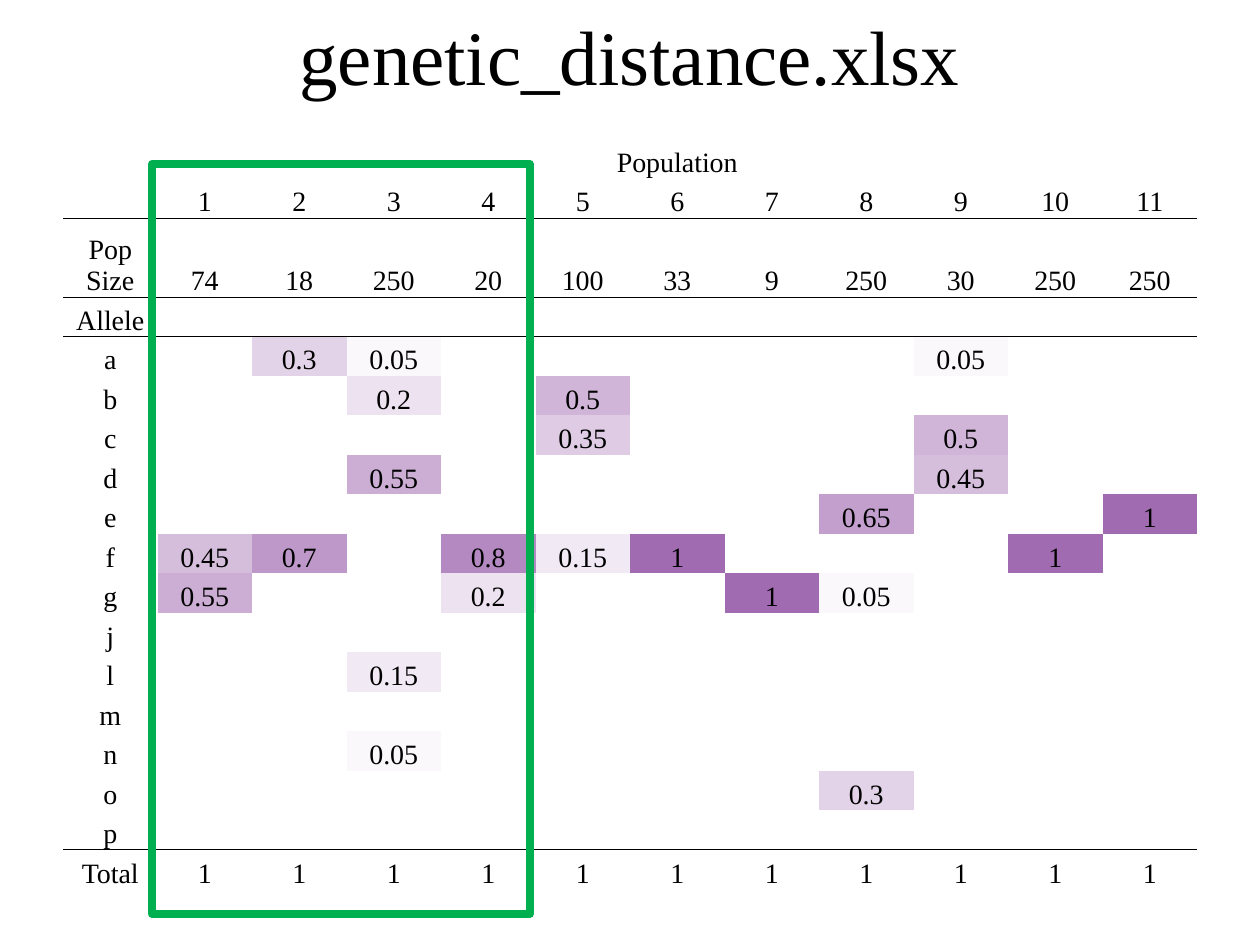
from lxml.etree import SubElement, Element
from pptx import Presentation
from pptx.dml.color import RGBColor
from pptx.enum.shapes import MSO_SHAPE as SHAPE
from pptx.enum.text import MSO_ANCHOR as ANCHOR, PP_ALIGN as ALIGN
from pptx.oxml.ns import qn
from pptx.util import Pt

PX = 914400 / 126
FONT = "Times New Roman"
NO_STYLE = "{2D5ABB26-0587-4C30-8999-92F81FD0307C}"
COLORS = {"text": "000000", "rule": "000000", "frame": "00B050"}
# Cell shade for each allele frequency
SHADES = {
    "0.05": "FBF8FC", "0.15": "F1E9F4", "0.2": "EDE2F0", "0.3": "E3D3E8",
    "0.35": "DFCCE4", "0.45": "D5BDDC", "0.5": "D0B5D8", "0.55": "CCAED5",
    "0.65": "C29FCD", "0.7": "BE98C9", "0.8": "B489C1", "1": "A16BB1",
}
POP_COUNT = 11
POP_SIZES = [74, 18, 250, 20, 100, 33, 9, 250, 30, 250, 250]
# Frequencies by allele, then by population
ALLELES = {
    "a": {2: "0.3", 3: "0.05", 9: "0.05"},
    "b": {3: "0.2", 5: "0.5"},
    "c": {5: "0.35", 9: "0.5"},
    "d": {3: "0.55", 9: "0.45"},
    "e": {8: "0.65", 11: "1"},
    "f": {1: "0.45", 2: "0.7", 4: "0.8", 5: "0.15", 6: "1", 10: "1"},
    "g": {1: "0.55", 4: "0.2", 7: "1", 8: "0.05"},
    "j": {},
    "l": {3: "0.15"},
    "m": {},
    "n": {3: "0.05"},
    "o": {8: "0.3"},
    "p": {},
}


def px(n):
    return round(n * PX)


def rgb(value):
    return RGBColor.from_string(value)


def set_text(tf, text, size=16, color=COLORS["text"], align=ALIGN.CENTER):
    p = tf.paragraphs[0]
    p.alignment = align
    r = p.add_run()
    r.text = text
    r.font.size = Pt(size)
    r.font.name = FONT
    r.font.color.rgb = rgb(color)


def add_rule(cell, side):
    """Draw a thin border on one side: lnT or lnB."""
    ln = Element(qn(f"a:{side}"), w=str(Pt(0.5)))
    fill = SubElement(ln, qn("a:solidFill"))
    SubElement(fill, qn("a:srgbClr"), val=COLORS["rule"])
    cell._tc.get_or_add_tcPr().insert(0, ln)


def fill_cell(cell, text, shade=None):
    cell.margin_left = cell.margin_right = cell.margin_top = px(1)
    cell.margin_bottom = 0
    cell.vertical_anchor = ANCHOR.BOTTOM
    if shade:
        cell.fill.solid()
        cell.fill.fore_color.rgb = rgb(shade)
    else:
        cell.fill.background()
    if text:
        set_text(cell.text_frame, text)


def table_rows():
    pops = range(1, POP_COUNT + 1)
    blank = [""] * POP_COUNT
    return [
        ["", "Population"] + blank[1:],
        [""] + [str(n) for n in pops],
        ["Pop Size"] + [str(n) for n in POP_SIZES],
        ["Allele"] + blank,
        *([name] + [freq.get(n, "") for n in pops] for name, freq in ALLELES.items()),
        ["Total"] + ["1"] * POP_COUNT,
    ]


def add_frequency_table(s, x, y, w, h):
    rows = table_rows()
    first_allele, total = 4, len(rows) - 1
    gf = s.shapes.add_table(len(rows), POP_COUNT + 1, px(x), px(y), px(w), px(h))
    table = gf.table
    table.first_row = table.horz_banding = False
    table._tbl.tblPr.find(qn("a:tableStyleId")).text = NO_STYLE

    # The population size row is two units high
    for col in table.columns:
        col.width = px(w / (POP_COUNT + 1))
    for i, row in enumerate(table.rows):
        row.height = px(h / (len(rows) + 1) * (2 if i == 2 else 1))

    for i, values in enumerate(rows):
        for j, text in enumerate(values):
            cell = table.cell(i, j)
            is_frequency = first_allele <= i < total and j > 0
            fill_cell(cell, text, SHADES.get(text) if is_frequency else None)
            if i in (1, 2, total - 1):
                add_rule(cell, "lnB")
            if i in (2, 3, total):
                add_rule(cell, "lnT")
    table.cell(0, 1).merge(table.cell(0, POP_COUNT))


def add_title(s, text, x, y, w, h):
    sp = s.shapes.add_textbox(px(x), px(y), px(w), px(h))
    tf = sp.text_frame
    tf.word_wrap = True
    tf.vertical_anchor = ANCHOR.MIDDLE
    set_text(tf, text, size=44)


def add_frame(s, x, y, w, h):
    sp = s.shapes.add_shape(SHAPE.RECTANGLE, px(x), px(y), px(w), px(h))
    sp.shadow.inherit = False
    sp.fill.background()
    sp.line.color.rgb = rgb(COLORS["frame"])
    sp.line.width = Pt(4.5)


def main():
    prs = Presentation()
    prs.slide_width, prs.slide_height = px(1260), px(945)
    s = prs.slides.add_slide(prs.slide_layouts[6])
    add_frequency_table(s, 63, 139, 1134, 750)
    add_title(s, "genetic_distance.xlsx", 63, 0, 1134, 110)
    # Highlight of populations 1 to 4
    add_frame(s, 152, 164, 378, 750)
    prs.save("out.pptx")


if __name__ == "__main__":
    main()
